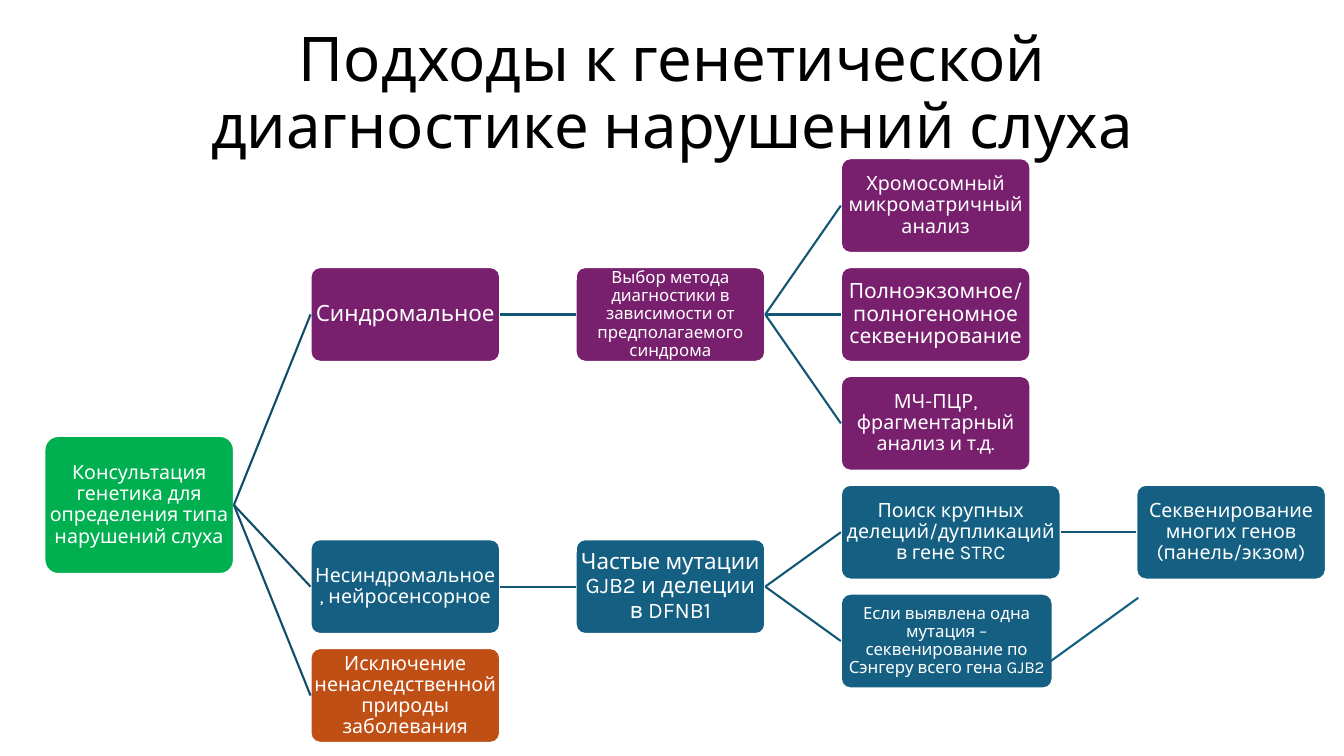
from lxml.etree import SubElement
from pptx import Presentation
from pptx.dml.color import RGBColor
from pptx.enum.shapes import MSO_CONNECTOR as Connector, MSO_SHAPE as Preset
from pptx.enum.text import MSO_ANCHOR as Anchor, MSO_AUTO_SIZE as AutoSize, PP_ALIGN as Align
from pptx.oxml.ns import qn
from pptx.util import Inches, Pt

BLACK = RGBColor(0x00, 0x00, 0x00)
WHITE = RGBColor(0xFF, 0xFF, 0xFF)
GREEN = RGBColor(0x00, 0xB0, 0x50)
PURPLE = RGBColor(0x78, 0x20, 0x6E)
BLUE = RGBColor(0x15, 0x60, 0x82)
ORANGE = RGBColor(0xC0, 0x4F, 0x15)
ROOT_LINE = RGBColor(0x11, 0x4D, 0x68)
BRANCH_LINE = RGBColor(0x13, 0x57, 0x76)

FONT = "Karla"
NODE_WIDTH, NODE_HEIGHT = 1.88, 0.94
ROW_STEP = 1.08
COLUMNS = [0, 2.64, 5.27, 7.9, 10.83]
RIGHT, LEFT = 3, 1

# name: (column, row, colour, size, text, width, height)
NODES = {
    "consultation": (0, 2.75, GREEN, 14, "Консультация генетика для определения типа нарушений слуха", NODE_WIDTH, 1.37),
    "syndromic": (1, 1, PURPLE, 16, "Синдромальное", NODE_WIDTH, NODE_HEIGHT),
    "method": (2, 1, PURPLE, 12, "Выбор метода диагностики в зависимости от предполагаемого синдрома", NODE_WIDTH, NODE_HEIGHT),
    "microarray": (3, 0, PURPLE, 14, "Хромосомный микроматричный анализ", NODE_WIDTH, NODE_HEIGHT),
    "exome": (3, 1, PURPLE, 15, "Полноэкзомное/ полногеномное секвенирование", NODE_WIDTH, NODE_HEIGHT),
    "fragment": (3, 2, PURPLE, 14, "МЧ-ПЦР, фрагментарный анализ и т.д.", NODE_WIDTH, NODE_HEIGHT),
    "nonsyndromic": (1, 3.5, BLUE, 14, "Несиндромальное, нейросенсорное", NODE_WIDTH, NODE_HEIGHT),
    "frequent": (2, 3.5, BLUE, 16, "Частые мутации GJB2 и делеции в DFNB1", NODE_WIDTH, NODE_HEIGHT),
    "deletions": (3, 3, BLUE, 14, "Поиск крупных делеций/дупликаций в гене STRC", 2.18, NODE_HEIGHT),
    "panel": (4, 3, BLUE, 14, "Секвенирование многих генов (панель/экзом)", NODE_WIDTH, NODE_HEIGHT),
    "sanger": (3, 4, BLUE, 12, "Если выявлена одна мутация – секвенирование по Сэнгеру всего гена GJB2", 2.1, NODE_HEIGHT),
    "exclusion": (1, 4.5, ORANGE, 14, "Исключение ненаследственной природы заболевания", NODE_WIDTH, NODE_HEIGHT),
}
BRANCHES = {
    "consultation": ["syndromic", "nonsyndromic", "exclusion"],
    "syndromic": ["method"],
    "method": ["microarray", "exome", "fragment"],
    "nonsyndromic": ["frequent"],
    "frequent": ["deletions", "sanger"],
    "deletions": ["panel"],
}


def write_text(shape, text, size, color, inset):
    frame = shape.text_frame
    frame.word_wrap = True
    frame.auto_size = AutoSize.NONE
    frame.vertical_anchor = Anchor.MIDDLE
    frame.margin_left = frame.margin_right = Inches(inset)
    frame.margin_top = frame.margin_bottom = Inches(min(inset, 0.05))
    paragraph = frame.paragraphs[0]
    paragraph.alignment = Align.CENTER
    paragraph.line_spacing = 0.9
    run = paragraph.add_run()
    run.text = text
    run.font.name = FONT
    run.font.size = Pt(size)
    run.font.color.rgb = color


def add_title(slide, left, top, width, height):
    title = slide.shapes.title
    title.left, title.top = Inches(left), Inches(top)
    title.width, title.height = Inches(width), Inches(height)
    write_text(title, "Подходы к генетической диагностике нарушений слуха",
               size=44, color=BLACK, inset=0.1)


def add_node(slide, left, center, color, size, text, width, height):
    shape = slide.shapes.add_shape(
        Preset.ROUNDED_RECTANGLE, Inches(left), Inches(center - height / 2),
        Inches(width), Inches(height))
    shape.adjustments[0] = 0.1
    shape.shadow.inherit = False
    shape.fill.solid()
    shape.fill.fore_color.rgb = color
    shape.line.color.rgb = WHITE
    shape.line.width = Pt(1.5)
    write_text(shape, text, size=size, color=WHITE, inset=0.01)
    return shape


def add_line(slide, color, start=(0, 0), end=(0, 0)):
    points = [Inches(value) for value in (*start, *end)]
    line = slide.shapes.add_connector(Connector.STRAIGHT, *points)
    line.line.color.rgb = color
    line.line.width = Pt(1.5)
    SubElement(line._element.spPr, qn("a:effectLst"))
    return line


def add_tree(slide, left, top):
    first_center = top + NODE_HEIGHT / 2
    shapes = {}
    for name, (column, row, *details) in NODES.items():
        shapes[name] = add_node(slide, left + COLUMNS[column],
                                first_center + row * ROW_STEP, *details)
    for parent, children in BRANCHES.items():
        color = ROOT_LINE if parent == "consultation" else BRANCH_LINE
        for child in children:
            line = add_line(slide, color)
            line.begin_connect(shapes[parent], RIGHT)
            line.end_connect(shapes[child], LEFT)
    add_line(slide, BLUE, start=(left + 10.85, top + 4.36), end=(left + 9.98, top + 4.99))


def main():
    presentation = Presentation()
    presentation.slide_width, presentation.slide_height = Inches(13.33), Inches(7.5)
    slide = presentation.slides.add_slide(presentation.slide_layouts[5])
    add_title(slide, 0.92, 0.22, 11.5, 1.45)
    add_tree(slide, 0.44, 1.57)
    presentation.save("out.pptx")


if __name__ == "__main__":
    main()
